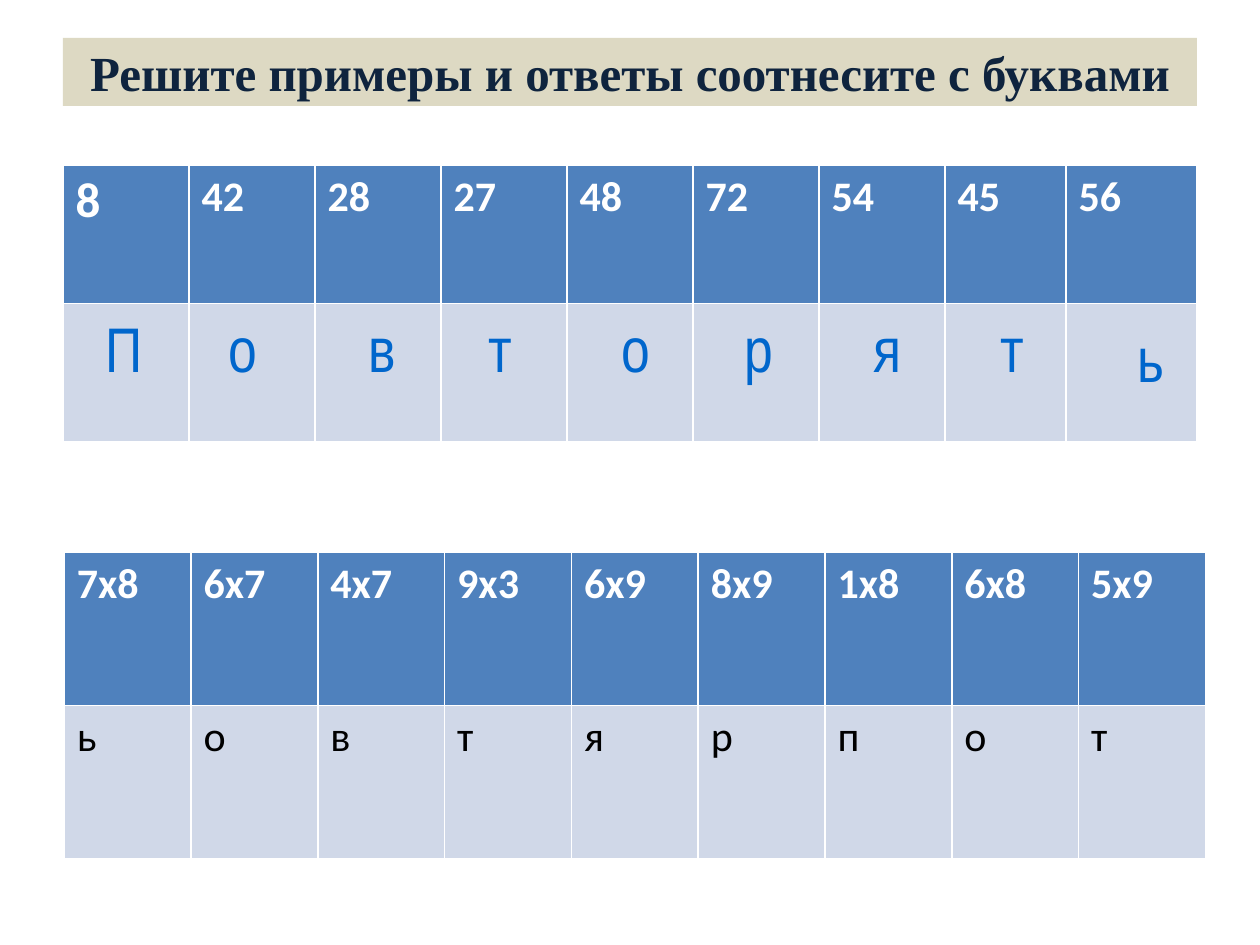
from dataclasses import dataclass

from lxml.etree import SubElement
from pptx import Presentation
from pptx.dml.color import RGBColor
from pptx.enum.shapes import MSO_SHAPE as Shape
from pptx.enum.text import MSO_ANCHOR as Anchor, PP_ALIGN as Align
from pptx.oxml.ns import qn
from pptx.slide import Slide
from pptx.text.text import Font, TextFrame
from pptx.util import Inches, Pt

WHITE = RGBColor(0xFF, 0xFF, 0xFF)
BLACK = RGBColor(0x00, 0x00, 0x00)
NAVY = RGBColor(0x0F, 0x24, 0x3E)
SAND = RGBColor(0xDD, 0xD9, 0xC3)
HEADER_BLUE = RGBColor(0x4F, 0x81, 0xBD)
BODY_BLUE = RGBColor(0xD0, 0xD8, 0xE8)
LETTER_BLUE = RGBColor(0x00, 0x66, 0xCC)
OUTLINE_BLUE = RGBColor(0x99, 0xCC, 0xFF)

SLIDE_WIDTH, SLIDE_HEIGHT = 10, 7.5
MARGIN = 0.05 * SLIDE_WIDTH
LETTER_TOP = 2.41


@dataclass(frozen=True)
class TextStyle:
    name: str
    size: float
    color: RGBColor
    bold: bool = False


@dataclass(frozen=True)
class CardTable:
    left: float
    top: float
    column_widths: list[float]
    row_height: float
    numbers: list[str]
    letters: str = ""


@dataclass(frozen=True)
class Letter:
    text: str
    left: float
    width: float
    height: float = 1.02
    drop: float = 0


TITLE_STYLE = TextStyle("Times New Roman", 28, NAVY, True)
HEADER_STYLE = TextStyle("Calibri", 24, WHITE, True)
FIRST_ANSWER_STYLE = TextStyle("Calibri", 28, WHITE, True)
BODY_STYLE = TextStyle("Calibri", 24, BLACK)
LETTER_STYLE = TextStyle("Arial Narrow", 36, LETTER_BLUE)

ANSWERS = CardTable(MARGIN, 1.31, [1] * 7 + [0.96, 1.04], 1.1,
                    "8 42 28 27 48 72 54 45 56".split())
EXERCISES = CardTable(0.51, 4.38, [9.06 / 9] * 9, 1.22,
                      "7х8 6х7 4х7 9х3 6х9 8х9 1х8 6х8 5х9".split(), "ьовтярпот")
LETTERS = [
    Letter("П", 0.67, 0.63, height=0.94),
    Letter("о", 1.61, 0.63),
    Letter("в", 2.64, 0.79),
    Letter("т", 3.66, 0.63),
    Letter("о", 4.69, 0.71),
    Letter("р", 5.63, 0.79, height=1.1),
    Letter("я", 6.65, 0.79),
    Letter("т", 7.6, 0.87),
    Letter("ь", 8.7, 0.87, height=1.18, drop=0.08),
]


def write(text_frame: TextFrame, text: str, style: TextStyle,
          alignment: Align = Align.LEFT) -> Font:
    """Fill the frame with one styled run and return the run's font."""
    text_frame.text = text
    paragraph = text_frame.paragraphs[0]
    paragraph.alignment = alignment
    font = paragraph.runs[0].font
    font.name, font.size, font.bold = style.name, Pt(style.size), style.bold
    font.color.rgb = style.color
    return font


def outline_text(font: Font, color: RGBColor, width: float) -> None:
    properties = font._element
    line = SubElement(properties, qn("a:ln"), w=str(Pt(width)))
    fill = SubElement(line, qn("a:solidFill"))
    SubElement(fill, qn("a:srgbClr"), val=str(color))
    properties.insert(0, line)  # the schema wants the line before the fill


def add_title(slide: Slide, text: str) -> None:
    title = slide.shapes.add_shape(Shape.RECTANGLE, Inches(MARGIN), Inches(0.3),
                                   Inches(SLIDE_WIDTH - 2 * MARGIN), Inches(0.54))
    title.shadow.inherit = False
    title.fill.solid()
    title.fill.fore_color.rgb = SAND
    title.line.fill.background()
    title.text_frame.word_wrap = True
    title.text_frame.vertical_anchor = Anchor.MIDDLE
    write(title.text_frame, text, TITLE_STYLE, Align.CENTER)


def add_card_table(slide: Slide, card: CardTable,
                   first_style: TextStyle = HEADER_STYLE) -> None:
    table = slide.shapes.add_table(
        2, len(card.numbers), Inches(card.left), Inches(card.top),
        Inches(sum(card.column_widths)), Inches(2 * card.row_height)).table
    table.horz_banding = False
    for row in table.rows:
        row.height = Inches(card.row_height)
    for index, (width, number) in enumerate(zip(card.column_widths, card.numbers)):
        table.columns[index].width = Inches(width)
        header, body = table.cell(0, index), table.cell(1, index)
        for cell, color in ((header, HEADER_BLUE), (body, BODY_BLUE)):
            cell.fill.solid()
            cell.fill.fore_color.rgb = color
        write(header.text_frame, number, HEADER_STYLE if index else first_style)
        if card.letters:
            write(body.text_frame, card.letters[index], BODY_STYLE)


def add_letter(slide: Slide, letter: Letter) -> None:
    box = slide.shapes.add_textbox(Inches(letter.left), Inches(LETTER_TOP + letter.drop),
                                   Inches(letter.width), Inches(letter.height))
    box.text_frame.word_wrap = False
    font = write(box.text_frame, letter.text, LETTER_STYLE, Align.CENTER)
    outline_text(font, OUTLINE_BLUE, 1.5)


def main() -> None:
    presentation = Presentation()
    presentation.slide_width = Inches(SLIDE_WIDTH)
    presentation.slide_height = Inches(SLIDE_HEIGHT)
    slide = presentation.slides.add_slide(presentation.slide_layouts[6])
    add_title(slide, "Решите примеры и ответы соотнесите с буквами")
    add_card_table(slide, ANSWERS, FIRST_ANSWER_STYLE)
    add_card_table(slide, EXERCISES)
    for letter in LETTERS:
        add_letter(slide, letter)
    presentation.save("out.pptx")


if __name__ == "__main__":
    main()
